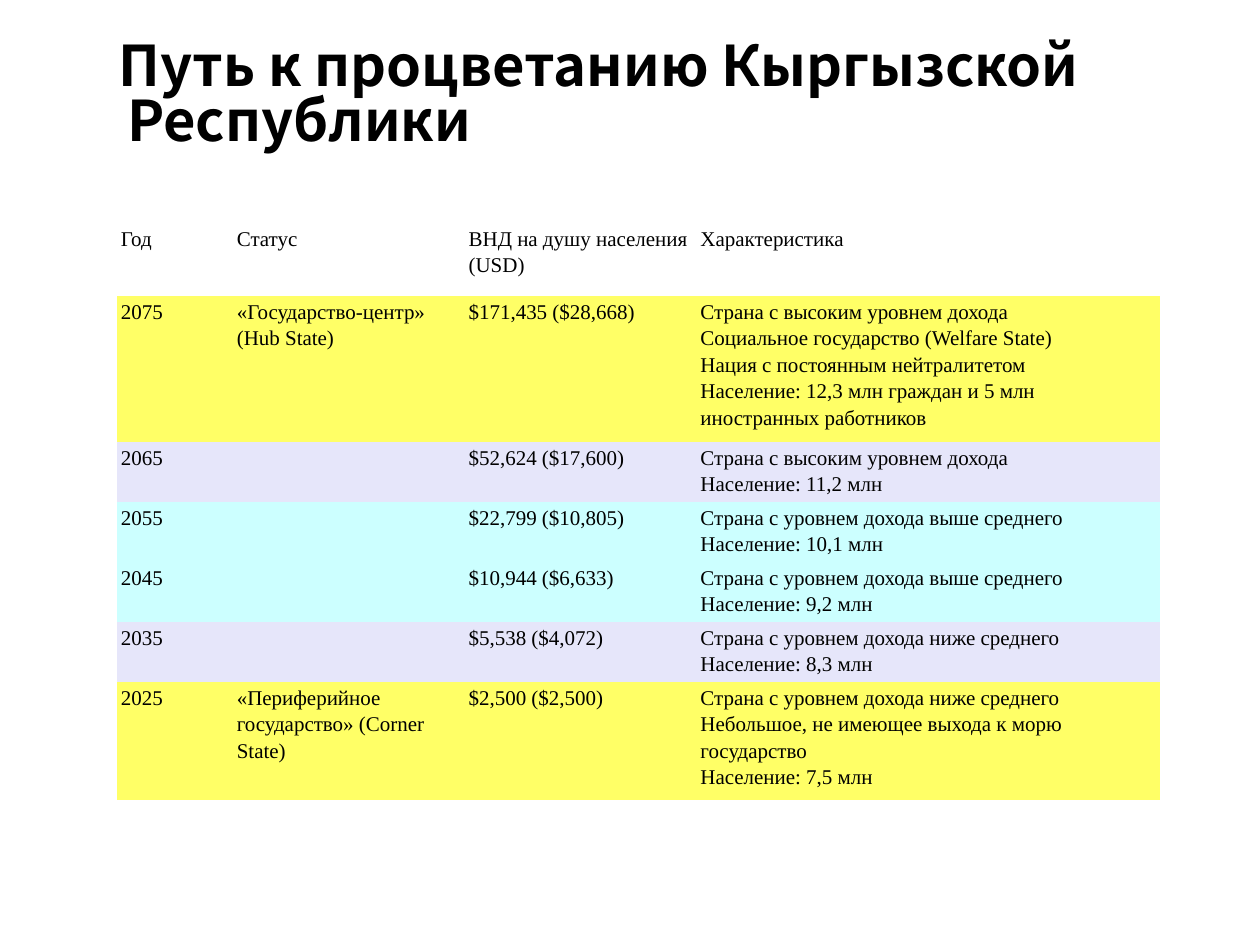
from pptx import Presentation
from pptx.dml.color import RGBColor as Rgb
from pptx.enum.text import MSO_ANCHOR as Anchor, PP_ALIGN as Align
from pptx.oxml.ns import qn
from pptx.util import Inches, Pt

COLORS = {"text": "000000", "milestone": "FFFF66", "lavender": "E6E6FA", "aqua": "CCFFFF"}
TITLE_FONT, TABLE_FONT = "Noto Sans CJK KR", "Times New Roman"
NO_GRID_STYLE = "{2D5ABB26-0587-4C30-8999-92F81FD0307C}"

TITLE = "Путь к процветанию Кыргызской Республики"
COLUMN_WIDTHS = [0.92, 1.84, 1.84, 3.68]
STAGES = [
    (0.58, None, "Год", "Статус", "ВНД на душу населения (USD)", ["Характеристика"]),
    (1.05, "milestone", "2075", "«Государство-центр» (Hub State)", "$171,435 ($28,668)",
     ["Страна с высоким уровнем дохода",
      "Социальное государство (Welfare State)",
      "Нация с постоянным нейтралитетом",
      "Население: 12,3 млн граждан и 5 млн иностранных работников"]),
    (0.47, "lavender", "2065", "", "$52,624 ($17,600)",
     ["Страна с высоким уровнем дохода", "Население: 11,2 млн"]),
    (0.47, "aqua", "2055", "", "$22,799 ($10,805)",
     ["Страна с уровнем дохода выше среднего", "Население: 10,1 млн"]),
    (0.47, "aqua", "2045", "", "$10,944 ($6,633)",
     ["Страна с уровнем дохода выше среднего", "Население: 9,2 млн"]),
    (0.47, "lavender", "2035", "", "$5,538 ($4,072)",
     ["Страна с уровнем дохода ниже среднего", "Население: 8,3 млн"]),
    (0.86, "milestone", "2025", "«Периферийное государство» (Corner State)", "$2,500 ($2,500)",
     ["Страна с уровнем дохода ниже среднего",
      "Небольшое, не имеющее выхода к морю государство",
      "Население: 7,5 млн"]),
]


def style(paragraph, font_name, size, spacing, bold=False):
    paragraph.alignment = Align.LEFT
    paragraph.line_spacing = spacing
    font = paragraph.font
    font.name, font.size, font.bold = font_name, Pt(size), bold
    font.color.rgb = Rgb.from_string(COLORS["text"])


def add_title(slide):
    frame = slide.shapes.add_textbox(
        Inches(0.92), Inches(0.28), Inches(9.36), Inches(1.09)).text_frame
    frame.word_wrap = True
    frame.margin_left = frame.margin_right = frame.margin_bottom = 0
    frame.margin_top = Inches(0.05)
    frame.text = TITLE
    heading = frame.paragraphs[0]
    style(heading, TITLE_FONT, 32, 0.83, bold=True)
    indents = heading.font._element.getparent()
    indents.set("marL", str(Inches(0.09)))
    indents.set("indent", str(Inches(-0.07)))


def fill_cell(cell, text, color):
    cell.margin_left = cell.margin_right = Inches(0.03)
    cell.margin_top = cell.margin_bottom = Inches(0.01)
    cell.vertical_anchor = Anchor.TOP
    cell.text = text
    style(cell.text_frame.paragraphs[0], TABLE_FONT, 12, 1.14)
    if color:
        cell.fill.solid()
        cell.fill.fore_color.rgb = Rgb.from_string(COLORS[color])
    else:
        cell.fill.background()


def add_stages(slide):
    table = slide.shapes.add_table(
        len(STAGES), len(COLUMN_WIDTHS), Inches(0.93), Inches(1.77),
        Inches(sum(COLUMN_WIDTHS)), Inches(sum(stage[0] for stage in STAGES))).table
    table.first_row = table.horz_banding = False
    table._tbl.tblPr.find(qn("a:tableStyleId")).text = NO_GRID_STYLE
    for column, width in zip(table.columns, COLUMN_WIDTHS):
        column.width = Inches(width)
    for row, (height, color, year, status, income, traits) in zip(table.rows, STAGES):
        row.height = Inches(height)
        for cell, text in zip(row.cells, (year, status, income, "\v".join(traits))):
            fill_cell(cell, text, color)


def main():
    deck = Presentation()
    deck.slide_width, deck.slide_height = Inches(10), Inches(7.5)
    slide = deck.slides.add_slide(deck.slide_layouts[6])
    add_title(slide)
    add_stages(slide)
    deck.save("out.pptx")


if __name__ == "__main__":
    main()
